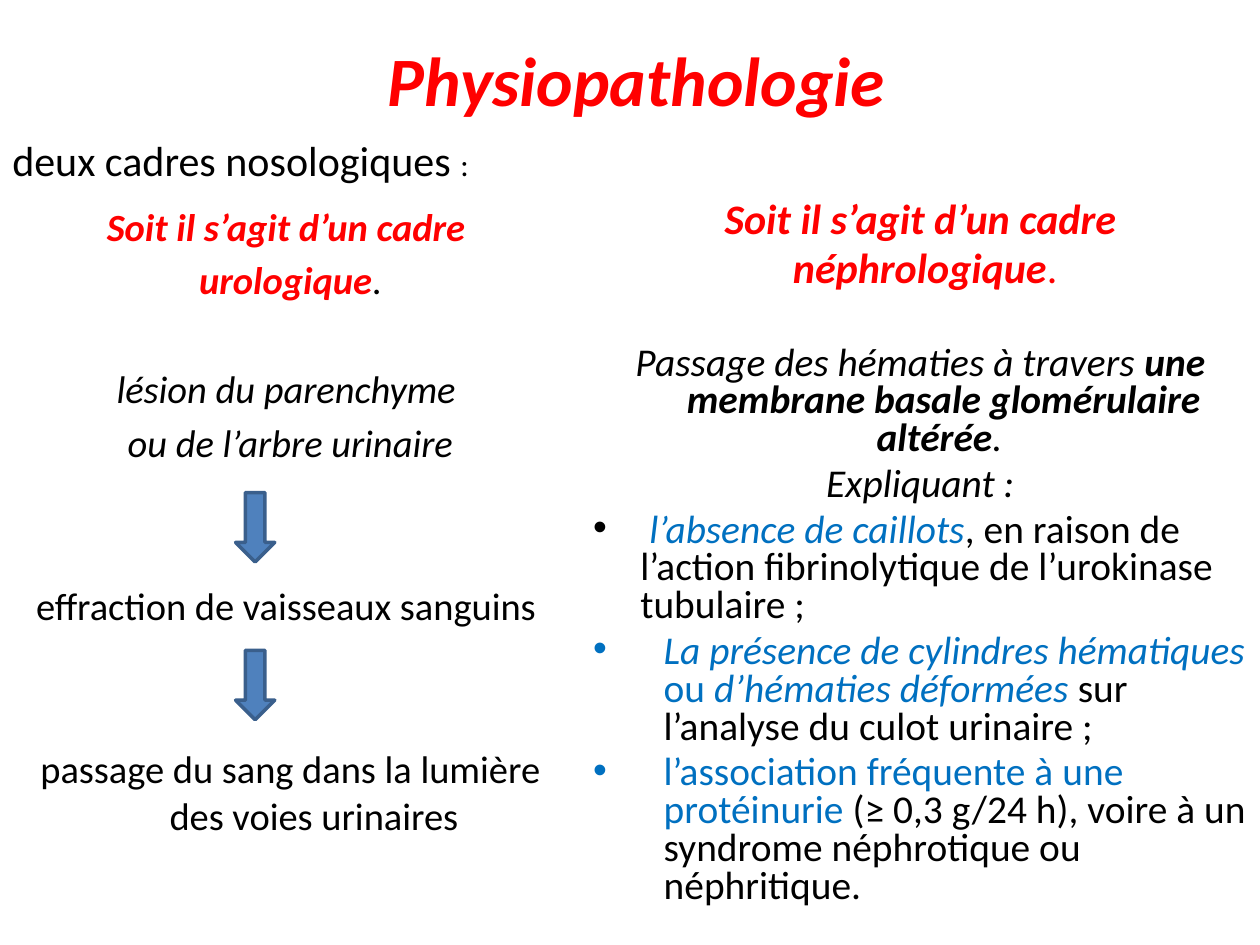
from dataclasses import dataclass

from lxml.etree import SubElement
from pptx import Presentation
from pptx.dml.color import RGBColor
from pptx.enum.shapes import MSO_SHAPE
from pptx.enum.text import MSO_ANCHOR, PP_ALIGN
from pptx.oxml.ns import qn
from pptx.util import Cm, Pt


@dataclass(frozen=True)
class Theme:
    font: str = "Calibri"
    red: str = "FF0000"
    blue: str = "0070C0"
    black: str = "000000"
    arrow_fill: str = "4F81BD"
    arrow_line: str = "3A5F8C"
    title: float = 39.6
    heading: float = 24
    nephrology: float = 22.5
    urology: float = 22
    colon: float = 18


@dataclass(frozen=True)
class Para:
    runs: list
    size: float
    blank_lines: int = 0
    hanging: float = 0.95
    bullet: bool = False
    centred: bool = True


T = Theme()
RED_STRONG = (T.red, "bi")
RED = (T.red, "")
BLUE = (T.blue, "")
BLUE_ITALIC = (T.blue, "i")
BLACK = (T.black, "")
ITALIC = (T.black, "i")
STRONG = (T.black, "bi")

TITLE = Para([("Physiopathologie", RED_STRONG)], T.title, hanging=0)

INTRO = [("deux cadres nosologiques ", T.heading), (":", T.colon)]

UROLOGY = [
    Para([("Soit il s’agit d’un cadre ", RED_STRONG)], T.urology),
    Para([("urologique", RED_STRONG), (".", BLACK)], T.urology),
    Para([("lésion du parenchyme ", ITALIC)], T.urology, blank_lines=1),
    Para([("ou de l’arbre urinaire", ITALIC)], T.urology),
    Para([("effraction de vaisseaux sanguins ", BLACK)], T.urology, blank_lines=2),
    Para([("passage du sang dans la lumière des voies urinaires", BLACK)],
         T.urology, blank_lines=2),
]

NEPHROLOGY = [
    Para([("Soit il s’agit d’un cadre", RED_STRONG)], T.heading),
    Para([(" néphrologique", RED_STRONG), (".", RED)], T.heading),
    Para([("Passage des hématies à travers", ITALIC),
          (" une membrane basale glomérulaire altérée", STRONG),
          (". ", ITALIC)], T.nephrology, blank_lines=1),
    Para([("Expliquant :", ITALIC)], T.nephrology),
    Para([(" ", BLACK), ("l’absence de caillots", BLUE_ITALIC),
          (", en raison de l’action fibrinolytique de l’urokinase tubulaire ;", BLACK)],
         T.nephrology, bullet=True, centred=False),
    Para([("La présence de cylindres hématiques ", BLUE_ITALIC), ("ou ", BLUE),
          ("d’hématies déformées ", BLUE_ITALIC),
          ("sur l’analyse du culot urinaire ;", BLACK)],
         T.nephrology, hanging=1.42, bullet=True, centred=False),
    Para([("l’association fréquente à une protéinurie ", BLUE),
          ("(≥ 0,3 g/24 h), voire à un syndrome néphrotique ou néphritique.", BLACK)],
         T.nephrology, hanging=1.42, bullet=True, centred=False),
]

SLIDE_W, SLIDE_H = 25.4, 19.05
COLUMN_TOP, COLUMN_SPLIT = 3.96, 11.71
ARROW_LEFT, ARROW_W, ARROW_H = 4.75, 0.79, 1.4
ARROW_TOPS = (9.93, 13.11)
LINE_HEIGHT, GAP = 1.22, 0.2


def add_run(paragraph, text, size, style):
    color, emphasis = style
    run = paragraph.add_run()
    run.text = text
    run.font.name = T.font
    run.font.size = Pt(size)
    run.font.bold = "b" in emphasis
    run.font.italic = "i" in emphasis
    run.font.color.rgb = RGBColor.from_string(color)


def write_para(paragraph, para, space_before, spacing):
    paragraph.alignment = PP_ALIGN.CENTER if para.centred else PP_ALIGN.LEFT
    paragraph.line_spacing = spacing
    paragraph.space_before = Pt(round(space_before, 1))
    properties = paragraph._p.get_or_add_pPr()
    properties.set("marL", str(Cm(para.hanging)))
    properties.set("indent", str(-Cm(para.hanging)))
    if para.bullet:
        SubElement(properties, qn("a:buFont"), typeface="Arial")
        SubElement(properties, qn("a:buChar"), char="•")
    for text, style in para.runs:
        add_run(paragraph, text, para.size, style)


def add_column(slide, left, width, height, paras, spacing=1.0):
    box = slide.shapes.add_textbox(Cm(left), Cm(COLUMN_TOP), Cm(width), Cm(height))
    frame = box.text_frame
    frame.word_wrap = True
    for i, para in enumerate(paras):
        paragraph = frame.add_paragraph() if i else frame.paragraphs[0]
        gap = para.size * GAP
        blank = para.size * LINE_HEIGHT * spacing + gap
        space_before = gap + para.blank_lines * blank if i else 0
        write_para(paragraph, para, space_before, spacing)


def add_title(slide):
    title = slide.shapes.title
    title.left, title.top, title.width, title.height = Cm(1.4), Cm(0), Cm(22.86), Cm(3.18)
    title.text_frame.vertical_anchor = MSO_ANCHOR.MIDDLE
    write_para(title.text_frame.paragraphs[0], TITLE, 0, 1.0)


def add_intro(slide):
    box = slide.shapes.add_textbox(Cm(0), Cm(2.59), Cm(9.8), Cm(1.27))
    box.text_frame.word_wrap = False
    for text, size in INTRO:
        add_run(box.text_frame.paragraphs[0], text, size, BLACK)


def add_arrow(slide, top):
    arrow = slide.shapes.add_shape(
        MSO_SHAPE.DOWN_ARROW, Cm(ARROW_LEFT), Cm(top), Cm(ARROW_W), Cm(ARROW_H))
    arrow.shadow.inherit = False
    arrow.fill.solid()
    arrow.fill.fore_color.rgb = RGBColor.from_string(T.arrow_fill)
    arrow.line.color.rgb = RGBColor.from_string(T.arrow_line)
    arrow.line.width = Pt(2)


def main():
    deck = Presentation()
    deck.slide_width, deck.slide_height = Cm(SLIDE_W), Cm(SLIDE_H)
    slide = deck.slides.add_slide(deck.slide_layouts[5])
    add_title(slide)
    add_column(slide, 0, COLUMN_SPLIT, 14.1, UROLOGY)
    add_column(slide, COLUMN_SPLIT, SLIDE_W - COLUMN_SPLIT, SLIDE_H - COLUMN_TOP,
               NEPHROLOGY, spacing=0.8)
    add_intro(slide)
    for top in ARROW_TOPS:
        add_arrow(slide, top)
    deck.save("out.pptx")


if __name__ == "__main__":
    main()
